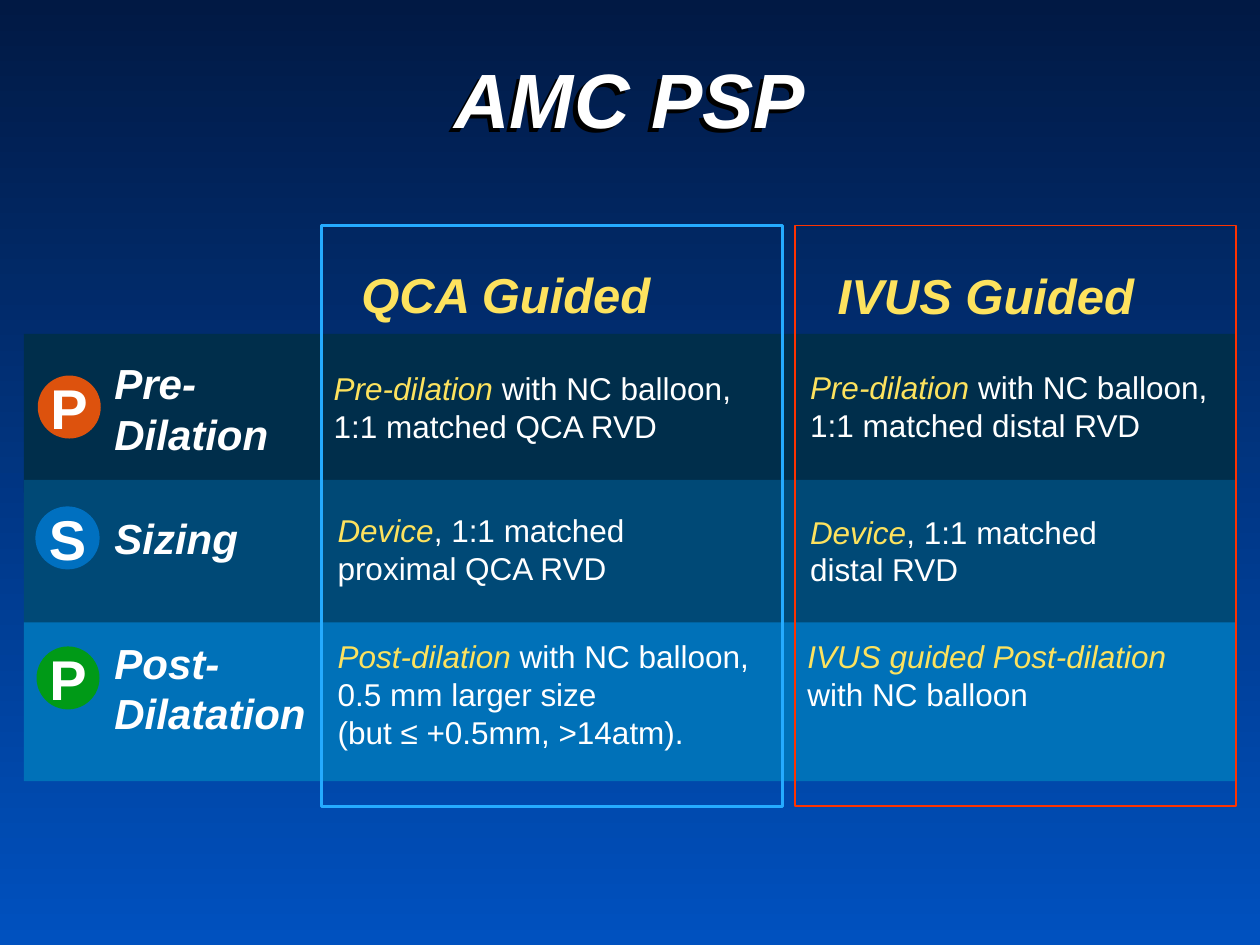
from dataclasses import dataclass

from lxml import etree
from pptx import Presentation, util as u
from pptx.dml.color import RGBColor
from pptx.enum import shapes, text
from pptx.oxml import ns


@dataclass(frozen=True)
class Theme:
    font: str = "Arial"
    sky_top: str = "011944"
    sky_bottom: str = "0051BF"
    white: str = "FFFFFF"
    yellow: str = "FDE25E"
    shadow: str = "000000"
    pre_band: str = "002E4B"
    sizing_band: str = "004976"
    post_band: str = "0071B8"
    pre_badge: str = "DD520D"
    sizing_badge: str = "0070C0"
    post_badge: str = "009A17"
    qca_frame: str = "25ABFF"
    ivus_frame: str = "FF3300"
    title_size: int = 44
    letter_size: int = 32
    heading_size: int = 28
    step_size: int = 24
    body_size: int = 18


THEME = Theme()

BANDS = [
    (190.8, THEME.pre_band),
    (274.3, THEME.sizing_band),
    (355.7, THEME.post_band),
]
STEPS = [
    ("Pre-\nDilation", (58.3, 200.9, 134.6, 65.5), 27),
    ("Sizing", (58.3, 289.4, 126.7, 36), 27),
    ("Post-\nDilatation", (58.3, 360.7, 134.6, 65.5), 0),
]
BADGES = [
    ("P", (21.6, 214.6, 36, 36), THEME.pre_badge),
    ("S", (20.2, 289.4, 36.7, 36), THEME.sizing_badge),
    ("P", (20.9, 369.4, 36, 36), THEME.post_badge),
]
QCA = (
    ("QCA Guided", (167.8, 147.6, 242.6, 41)),
    [
        ("Pre-dilation", " with NC balloon,\v1:1 matched QCA RVD",
         (183.6, 207.4, 272.2, 51.1)),
        ("Device", ", 1:1 matched\nproximal QCA RVD",
         (185.8, 288.7, 257, 51.1)),
        ("Post-dilation",
         " with NC balloon,\v0.5 mm larger size\n(but ≤ +0.5mm, >14atm).",
         (185.8, 360.7, 257.8, 72.7)),
    ],
)
IVUS = (
    ("IVUS Guided", (442.1, 148.3, 242.6, 41)),
    [
        ("Pre-dilation", " with NC balloon,\v1:1 matched distal RVD",
         (455.8, 206.6, 242.6, 51.1)),
        ("Device", ", 1:1 matched\ndistal RVD",
         (455.8, 289.4, 242.6, 51.1)),
        ("IVUS guided Post-dilation", " with NC balloon",
         (454.3, 360.7, 252, 72.7)),
    ],
)
FRAMES = [
    ((183.6, 128.9, 263.5, 331.9), THEME.qca_frame, 1.5),
    ((454.3, 128.9, 252, 331.9), THEME.ivus_frame, 1),
]


def points(box):
    return [u.Pt(value) for value in box]


def write(paragraph, content, *, size, color=THEME.white, bold=False, italic=False):
    for index, line in enumerate(content.split("\v")):
        if index:
            paragraph.add_line_break()
        run = paragraph.add_run()
        run.text = line
        font = run.font
        font.name, font.size = THEME.font, u.Pt(size)
        font.bold, font.italic = bold, italic
        font.color.rgb = RGBColor.from_string(color)


def add_text(parent, content, box, *, align=text.PP_ALIGN.LEFT, hanging=0,
             lead="", **style):
    label = parent.add_textbox(*points(box))
    frame = label.text_frame
    frame.word_wrap = True
    for index, line in enumerate(content.split("\n")):
        paragraph = frame.add_paragraph() if index else frame.paragraphs[0]
        paragraph.alignment = align
        if hanging:
            properties = paragraph._p.get_or_add_pPr()
            properties.set("marL", str(u.Pt(hanging)))
            properties.set("indent", str(-u.Pt(hanging)))
        if lead and not index:
            write(paragraph, lead, color=THEME.yellow, italic=True, size=style["size"])
        write(paragraph, line, **style)
    return label


def add_block(parent, kind, box, *, fill=None, line=None, width=0):
    block = parent.add_shape(kind, *points(box))
    block.shadow.inherit = False
    if fill:
        block.fill.solid()
        block.fill.fore_color.rgb = RGBColor.from_string(fill)
    else:
        block.fill.background()
    if line:
        block.line.color.rgb = RGBColor.from_string(line)
        block.line.width = u.Pt(width)
    else:
        block.line.fill.background()
    return block


def add_badge(parent, letter, box, color):
    badge = add_block(parent, shapes.MSO_SHAPE.OVAL, box, fill=color)
    frame = badge.text_frame
    frame.word_wrap = False
    frame.vertical_anchor = text.MSO_ANCHOR.MIDDLE
    frame.paragraphs[0].alignment = text.PP_ALIGN.CENTER
    write(frame.paragraphs[0], letter, size=THEME.letter_size, bold=True)


def add_guidance(parent, heading, cells):
    column = parent.add_group_shape().shapes
    name, box = heading
    add_text(column, name, box, align=text.PP_ALIGN.CENTER,
             size=THEME.heading_size, color=THEME.yellow, bold=True, italic=True)
    for lead, rest, cell in cells:
        add_text(column, rest, cell, lead=lead, size=THEME.body_size)


def add_title(parent, content):
    title = add_text(parent, content, (0, 25.9, 720, 51.1),
                     align=text.PP_ALIGN.CENTER, size=THEME.title_size,
                     bold=True, italic=True)
    frame = title.text_frame
    frame.margin_left = frame.margin_right = u.Pt(3.6)
    frame.margin_top = frame.margin_bottom = u.Pt(3.6)
    effects = etree.SubElement(title._element.spPr, ns.qn("a:effectLst"))
    shadow = etree.SubElement(effects, ns.qn("a:outerShdw"), dist=str(u.Pt(3.5)),
                              dir="8100000", algn="ctr", rotWithShape="0")
    etree.SubElement(shadow, ns.qn("a:srgbClr"), val=THEME.shadow)


def paint_background(slide):
    fill = slide.background.fill
    fill.gradient()
    fill.gradient_angle = 270
    for stop, color in zip(fill.gradient_stops, (THEME.sky_top, THEME.sky_bottom)):
        stop.color.rgb = RGBColor.from_string(color)


def main():
    deck = Presentation()
    deck.slide_width, deck.slide_height = u.Pt(720), u.Pt(540)
    slide = deck.slides.add_slide(deck.slide_layouts[6])
    paint_background(slide)
    canvas = slide.shapes
    for top, color in BANDS:
        add_block(canvas, shapes.MSO_SHAPE.RECTANGLE, (13.7, top, 692.6, 90.7), fill=color)
    for step, box, hanging in STEPS:
        add_text(canvas, step, box, hanging=hanging, size=THEME.step_size,
                 bold=True, italic=True)
    for heading, cells in (QCA, IVUS):
        add_guidance(canvas, heading, cells)
    add_title(canvas, "AMC PSP")
    for letter, box, color in BADGES:
        add_badge(canvas, letter, box, color)
    for box, color, width in FRAMES:
        add_block(canvas, shapes.MSO_SHAPE.RECTANGLE, box, line=color, width=width)
    deck.save("out.pptx")


if __name__ == "__main__":
    main()
